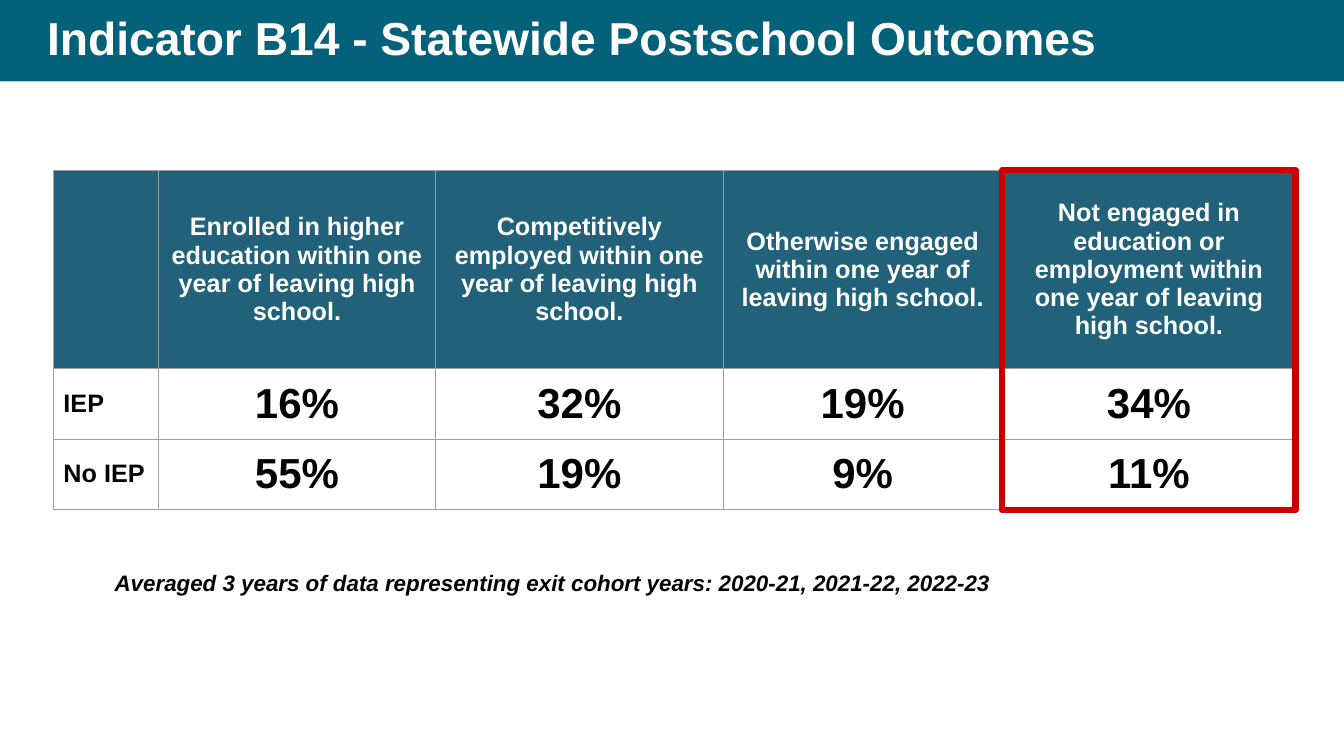
from lxml.etree import SubElement as Sub
from pptx import Presentation
from pptx.dml.color import RGBColor as Rgb
from pptx.enum.shapes import MSO_SHAPE as Shape
from pptx.enum.text import MSO_ANCHOR as Anchor, PP_ALIGN as Align
from pptx.oxml.ns import qn
from pptx.util import Cm, Pt

HUES = {
    "bar": "03617A",
    "head": "21617A",
    "grid": "9E9E9E",
    "mark": "CC0000",
    "dark": "000000",
    "light": "FFFFFF",
}
COLS = [2.64, 6.99, 7.24, 7.04, 7.39]
TALL = [5, 1.69, 1.69]
LEFT, TOP = 1.35, 4.29
DATA = [
    [
        "",
        "Enrolled in higher education within one year of leaving high school.",
        "Competitively employed within one year of leaving high school.",
        "Otherwise engaged within one year of leaving high school.",
        "Not engaged in education or employment within one year of leaving high school.",
    ],
    ["IEP", "16%", "32%", "19%", "34%"],
    ["No IEP", "55%", "19%", "9%", "11%"],
]


def tint(name):
    """Return the named colour."""
    return Rgb.from_string(HUES[name])


def style(para, size, hue):
    """Set the bold font of a paragraph."""
    font = para.font
    font.name, font.size, font.bold = "Arial", Pt(size), True
    font.color.rgb = tint(hue)


def add_rect(slide, box, fill=None, line=None):
    """Add a rectangle with a fill or an outline."""
    rect = slide.shapes.add_shape(Shape.RECTANGLE, *map(Cm, box))
    rect.shadow.inherit = False
    if fill:
        rect.fill.solid()
        rect.fill.fore_color.rgb = tint(fill)
    else:
        rect.fill.background()
    if line:
        rect.line.color.rgb = tint(line)
        rect.line.width = Pt(4.5)
    else:
        rect.line.fill.background()


def add_text(slide, box, text, size, hue, pad):
    """Add a text box with one paragraph and return its frame."""
    frame = slide.shapes.add_textbox(*map(Cm, box)).text_frame
    frame.word_wrap = True
    frame.margin_top = frame.margin_bottom = Cm(pad)
    para = frame.paragraphs[0]
    para.text = text
    style(para, size, hue)
    return frame


def add_edge(cell):
    """Draw thin lines on the four sides of a cell."""
    props = cell._tc.get_or_add_tcPr()
    for side in ("lnL", "lnR", "lnT", "lnB"):
        edge = Sub(props, qn(f"a:{side}"), w=str(Pt(0.75)))
        fill = Sub(edge, qn("a:solidFill"))
        Sub(fill, qn("a:srgbClr"), val=HUES["grid"])


def fill_cell(cell, text, head, label):
    """Write and format one table cell."""
    add_edge(cell)
    if head:
        cell.fill.solid()
        cell.fill.fore_color.rgb = tint("head")
    else:
        cell.fill.background()
    cell.vertical_anchor = Anchor.MIDDLE
    cell.margin_left = cell.margin_right = Cm(0.25)
    cell.margin_top = cell.margin_bottom = Cm(0.25)
    para = cell.text_frame.paragraphs[0]
    para.text = text
    para.alignment = Align.LEFT if label else Align.CENTER
    style(para, 18 if head or label else 30, "light" if head else "dark")


def add_grid(slide):
    """Add the table of outcomes."""
    box = (LEFT, TOP, sum(COLS), sum(TALL))
    table = slide.shapes.add_table(len(TALL), len(COLS), *map(Cm, box)).table
    table.first_row = table.horz_banding = False
    for col, width in zip(table.columns, COLS):
        col.width = Cm(width)
    for r, (row, height) in enumerate(zip(table.rows, TALL)):
        row.height = Cm(height)
        for c, cell in enumerate(row.cells):
            fill_cell(cell, DATA[r][c], r == 0, c == 0)


def main():
    """Build and save the slide."""
    deck = Presentation()
    deck.slide_width, deck.slide_height = Cm(33.87), Cm(19.05)
    slide = deck.slides.add_slide(deck.slide_layouts[6])

    add_rect(slide, (0, 0, 33.87, 2.05), fill="bar")
    title = add_text(slide, (0.94, 0, 31.29, 2.05),
                     "Indicator B14 - Statewide Postschool Outcomes", 33, "light", 0.13)
    title.vertical_anchor = Anchor.MIDDLE
    title.paragraphs[0].line_spacing = 0.9

    add_grid(slide)
    note = add_text(slide, (2.64, 14.1, 28.58, 1.19),
                    "Averaged 3 years of data representing exit cohort years: "
                    "2020-21, 2021-22, 2022-23", 16, "dark", 0.25)
    note.paragraphs[0].font.italic = True

    add_rect(slide, (LEFT + sum(COLS[:-1]), TOP, COLS[-1], 8.56), line="mark")
    deck.save("out.pptx")


if __name__ == "__main__":
    main()
